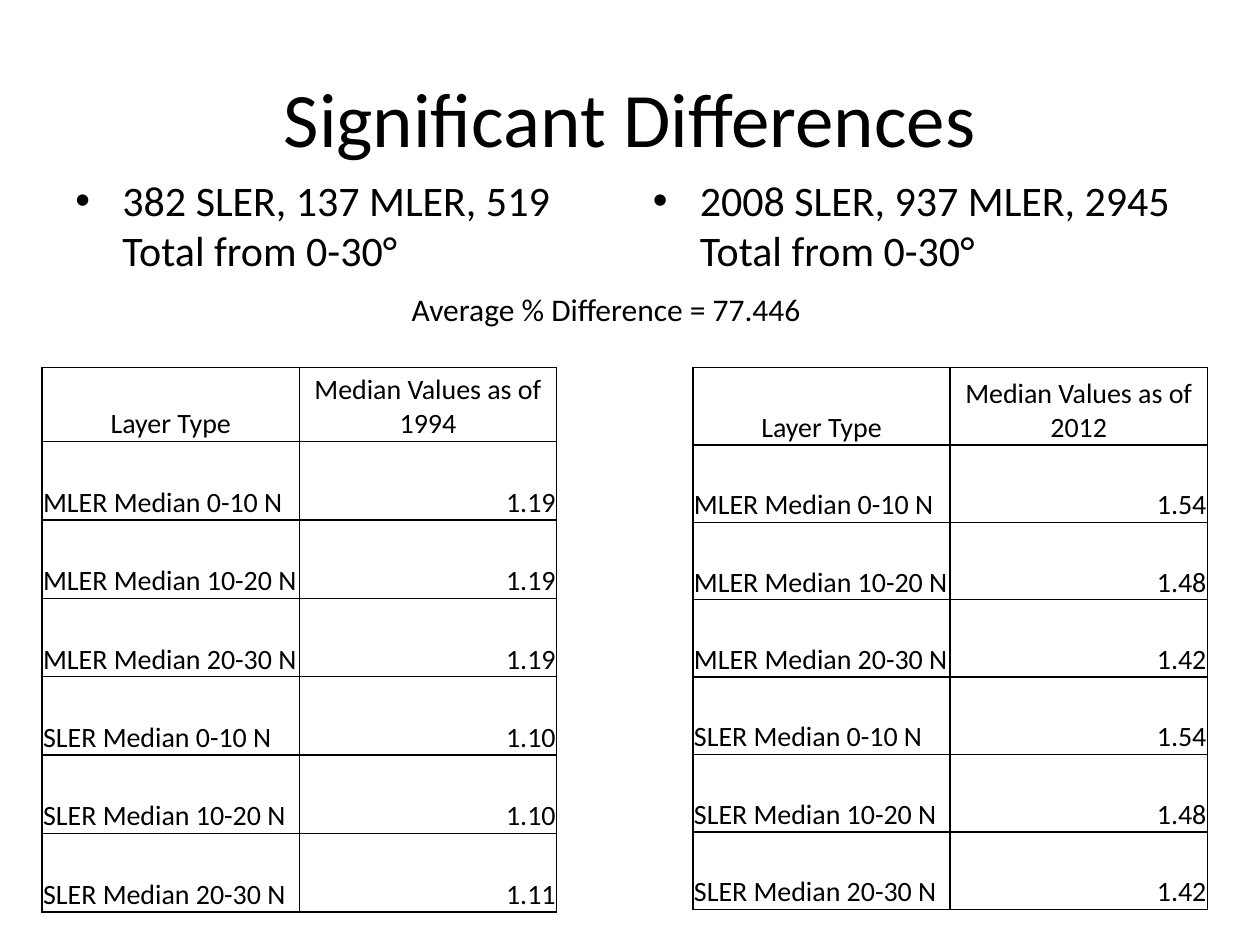
from dataclasses import dataclass

from lxml.etree import SubElement
from pptx import Presentation
from pptx.dml.color import RGBColor
from pptx.enum.text import MSO_ANCHOR, MSO_AUTO_SIZE, PP_ALIGN
from pptx.oxml import parse_xml
from pptx.oxml.ns import nsdecls, qn
from pptx.util import Cm, Pt


@dataclass(frozen=True)
class Theme:
    font: str = "Calibri"
    ink: str = "000000"
    title: int = 44
    bullet: int = 24
    note: int = 18
    cell: int = 16
    border: int = 1


THEME = Theme()
LAYERS = [f"{kind} Median {band} N"
          for kind in ("MLER", "SLER") for band in ("0-10", "10-20", "20-30")]


def style(p, size, align=PP_ALIGN.LEFT):
    p.alignment = align
    p.font.name = THEME.font
    p.font.size = Pt(size)
    p.font.bold = False
    p.font.color.rgb = RGBColor.from_string(THEME.ink)


def place_title(slide, text, left, top, width, height):
    sp = slide.shapes.title
    sp.left, sp.top, sp.width, sp.height = map(Cm, (left, top, width, height))
    tf = sp.text_frame
    tf.text = text
    tf.vertical_anchor = MSO_ANCHOR.MIDDLE
    style(tf.paragraphs[0], THEME.title, PP_ALIGN.CENTER)


def add_text(slide, text, size, left, top, width, height):
    """Add a wrapping text box and return its text frame."""
    sp = slide.shapes.add_textbox(*map(Cm, (left, top, width, height)))
    tf = sp.text_frame
    tf.word_wrap = True
    tf.text = text
    style(tf.paragraphs[0], size)
    return tf


def add_bullet(slide, text, *box):
    p = add_text(slide, text, THEME.bullet, *box).paragraphs[0]
    p.space_before = Pt(THEME.bullet * 0.2)
    pPr = p._p.get_or_add_pPr()
    indent = Cm(0.95)
    pPr.set("marL", str(indent))
    pPr.set("indent", str(-indent))
    bullet_font = parse_xml(f'<a:buFont {nsdecls("a")} typeface="Arial"/>')
    pPr.insert_element_before(bullet_font, "a:defRPr")
    bullet = parse_xml(f'<a:buChar {nsdecls("a")} char="•"/>')
    pPr.insert_element_before(bullet, "a:defRPr")


def add_borders(cell):
    """Outline all four sides; the lines must precede the cell's fill."""
    tcPr = cell._tc.get_or_add_tcPr()
    for i, side in enumerate(("lnL", "lnR", "lnT", "lnB")):
        ln = SubElement(tcPr, qn(f"a:{side}"), w=str(Pt(THEME.border)))
        fill = SubElement(ln, qn("a:solidFill"))
        SubElement(fill, qn("a:srgbClr"), val=THEME.ink)
        tcPr.insert(i, ln)


def fill_cell(cell, text, align):
    cell.text = text
    cell.vertical_anchor = MSO_ANCHOR.BOTTOM
    cell.margin_left = cell.margin_right = cell.margin_top = Cm(0.02)
    cell.margin_bottom = 0
    style(cell.text_frame.paragraphs[0], THEME.cell, align)
    cell.fill.background()
    add_borders(cell)


def add_median_table(slide, year, medians, left, top, width, head_h, row_h):
    rows = [("Layer Type", f"Median Values as of {year}"), *zip(LAYERS, medians)]
    height = head_h + row_h * len(medians)
    frame = slide.shapes.add_table(len(rows), 2, *map(Cm, (left, top, width, height)))
    table = frame.table
    table.first_row = table.horz_banding = False
    for i, row in enumerate(rows):
        table.rows[i].height = Cm(row_h if i else head_h)
        aligns = (PP_ALIGN.LEFT, PP_ALIGN.RIGHT) if i else (PP_ALIGN.CENTER,) * 2
        for j, (text, align) in enumerate(zip(row, aligns)):
            fill_cell(table.cell(i, j), text, align)


def add_note(slide, text, *box):
    tf = add_text(slide, text, THEME.note, *box)
    tf.auto_size = MSO_AUTO_SIZE.SHAPE_TO_FIT_TEXT


def main():
    prs = Presentation()
    prs.slide_width, prs.slide_height = Cm(25.4), Cm(19.05)
    slide = prs.slides.add_slide(prs.slide_layouts[5])

    place_title(slide, "Significant Differences", 1.27, 0.76, 22.86, 3.18)
    add_bullet(slide, "382 SLER, 137 MLER, 519 Total from 0-30°",
               1.27, 3.39, 11.22, 2.12)
    add_bullet(slide, "2008 SLER, 937 MLER, 2945 Total from 0-30°",
               12.91, 3.39, 11.22, 2.12)
    add_median_table(slide, 2012, ("1.54", "1.48", "1.42") * 2,
                     13.97, 7.41, 10.37, 1.56, 1.56)
    add_median_table(slide, 1994, ("1.19", "1.19", "1.19", "1.10", "1.10", "1.11"),
                     0.85, 7.41, 10.37, 1.49, 1.58)
    add_note(slide, "Average % Difference = 77.446", 8.05, 5.72, 8.46, 1.02)

    prs.save("out.pptx")


if __name__ == "__main__":
    main()
